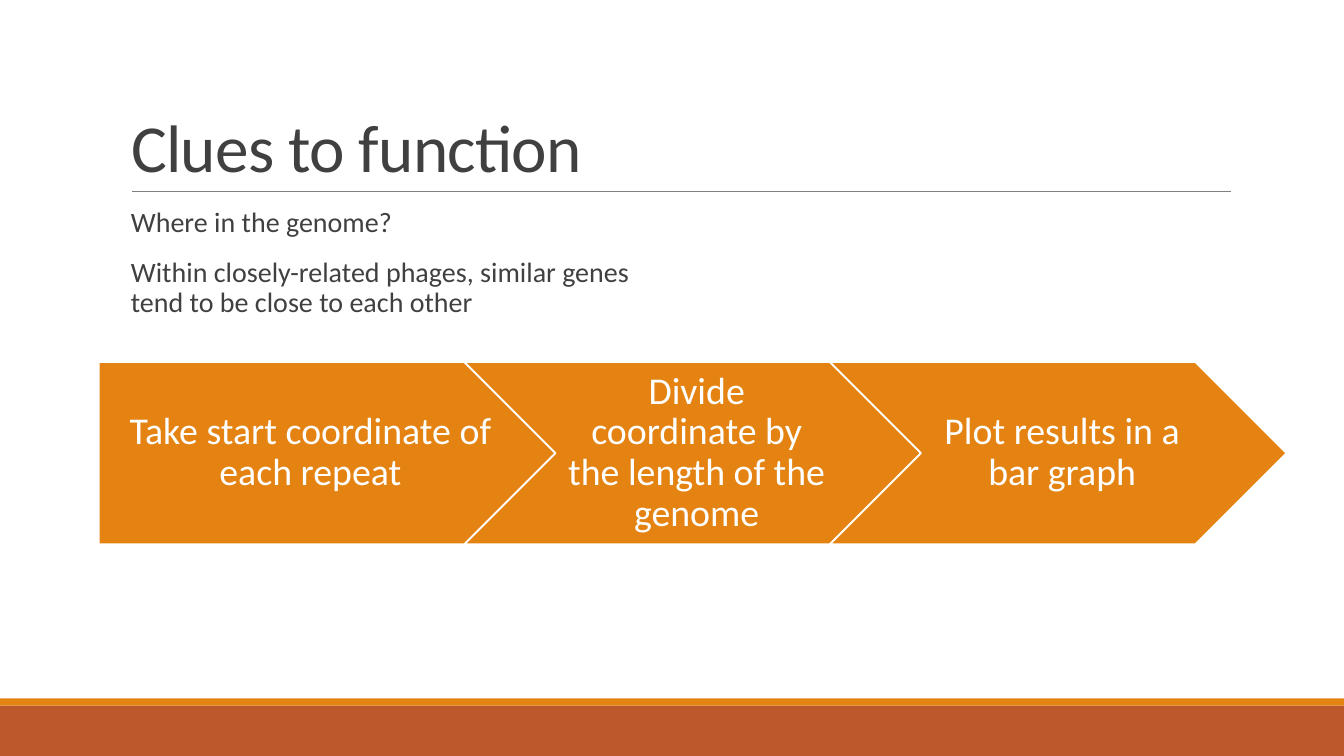
from pptx import Presentation
from pptx import util as u
from pptx.dml import color
from pptx.enum import shapes, text

TITLE = "Clues to function"
POINTS = [
    "Where in the genome?",
    "Within closely-related phages, similar genes tend to be close to each other",
]
STEPS = [
    "Take start coordinate of each repeat",
    "Divide coordinate by the length of the genome",
    "Plot results in a bar graph",
]
BANDS = [(7, 0.5, "BD582C"), (6.93, 0.07, "E48312")]
FONT, INK, ORANGE, WHITE = "Calibri", "404040", "E48312", "FFFFFF"
PAGE_WIDTH, PAGE_HEIGHT = 13.33, 7.5
STEP_LEFT, STEP_TOP, STEP_WIDTH, STEP_HEIGHT = 0.98, 3.59, 4.53, 1.81
STEP_PITCH = STEP_WIDTH - STEP_HEIGHT / 2


def rgb(value):
    return color.RGBColor.from_string(value)


def inches(*lengths):
    return [u.Inches(length) for length in lengths]


def add_span(para, words, size, ink):
    span = para.add_run()
    span.text = words
    span.font.name = FONT
    span.font.size = u.Pt(size)
    span.font.color.rgb = rgb(ink)
    return span


def set_frame(frame, anchor, insets):
    frame.word_wrap = True
    frame.auto_size = text.MSO_AUTO_SIZE.NONE
    frame.vertical_anchor = anchor
    (frame.margin_left, frame.margin_top,
     frame.margin_right, frame.margin_bottom) = inches(*insets)


def add_filled(page, kind, place, fill):
    box = page.shapes.add_shape(kind, *inches(*place))
    box.shadow.inherit = False
    box.fill.solid()
    box.fill.fore_color.rgb = rgb(fill)
    box.line.fill.background()
    return box


def add_bands(page):
    for top, height, fill in BANDS:
        add_filled(page, shapes.MSO_SHAPE.RECTANGLE,
                   (0, top, PAGE_WIDTH, height), fill)


def add_rule(page):
    rule = page.shapes.add_connector(
        shapes.MSO_CONNECTOR.STRAIGHT, *inches(1.31, 1.9, 12.21, 1.9))
    rule.line.color.rgb = rgb("808080")
    rule.line.width = u.Pt(0.5)
    effects = rule._element.spPr.makeelement(
        "{http://schemas.openxmlformats.org/drawingml/2006/main}effectLst", {})
    rule._element.spPr.append(effects)


def fill_title(page):
    box = page.shapes.title
    box.left, box.top, box.width, box.height = inches(1.2, 0.31, 11, 1.59)
    set_frame(box.text_frame, text.MSO_ANCHOR.BOTTOM, (0.1, 0.05, 0.1, 0.05))
    para = box.text_frame.paragraphs[0]
    para.alignment = text.PP_ALIGN.LEFT
    para.line_spacing = 0.85
    span = add_span(para, TITLE, 48, INK)
    span.font._element.set("spc", "-50")


def add_points(page):
    box = page.shapes.add_textbox(*inches(1.2, 2.02, 5.4, 4.4))
    frame = box.text_frame
    set_frame(frame, text.MSO_ANCHOR.TOP, (0.1, 0.05, 0, 0.05))
    for index, words in enumerate(POINTS):
        para = frame.add_paragraph() if index else frame.paragraphs[0]
        para.line_spacing = 0.9
        para.space_before = u.Pt(12)
        para.space_after = u.Pt(2)
        add_span(para, words, 20, INK)


def add_steps(page):
    for index, words in enumerate(STEPS):
        kind = shapes.MSO_SHAPE.CHEVRON if index else shapes.MSO_SHAPE.PENTAGON
        place = (STEP_LEFT + index * STEP_PITCH, STEP_TOP,
                 STEP_WIDTH, STEP_HEIGHT)
        box = add_filled(page, kind, place, ORANGE)
        box.line.color.rgb = rgb(WHITE)
        box.line.width = u.Pt(1.25)
        left_inset = 0.12 if index else 0.16
        set_frame(box.text_frame, text.MSO_ANCHOR.MIDDLE,
                  (left_inset, 0.08, 0.04, 0.08))
        para = box.text_frame.paragraphs[0]
        para.alignment = text.PP_ALIGN.CENTER
        para.line_spacing = 0.9
        add_span(para, words, 27, WHITE)


def main():
    deck = Presentation()
    deck.slide_width, deck.slide_height = inches(PAGE_WIDTH, PAGE_HEIGHT)
    page = deck.slides.add_slide(deck.slide_layouts.get_by_name("Title Only"))
    add_bands(page)
    add_rule(page)
    fill_title(page)
    add_points(page)
    add_steps(page)
    deck.save("out.pptx")


if __name__ == "__main__":
    main()
